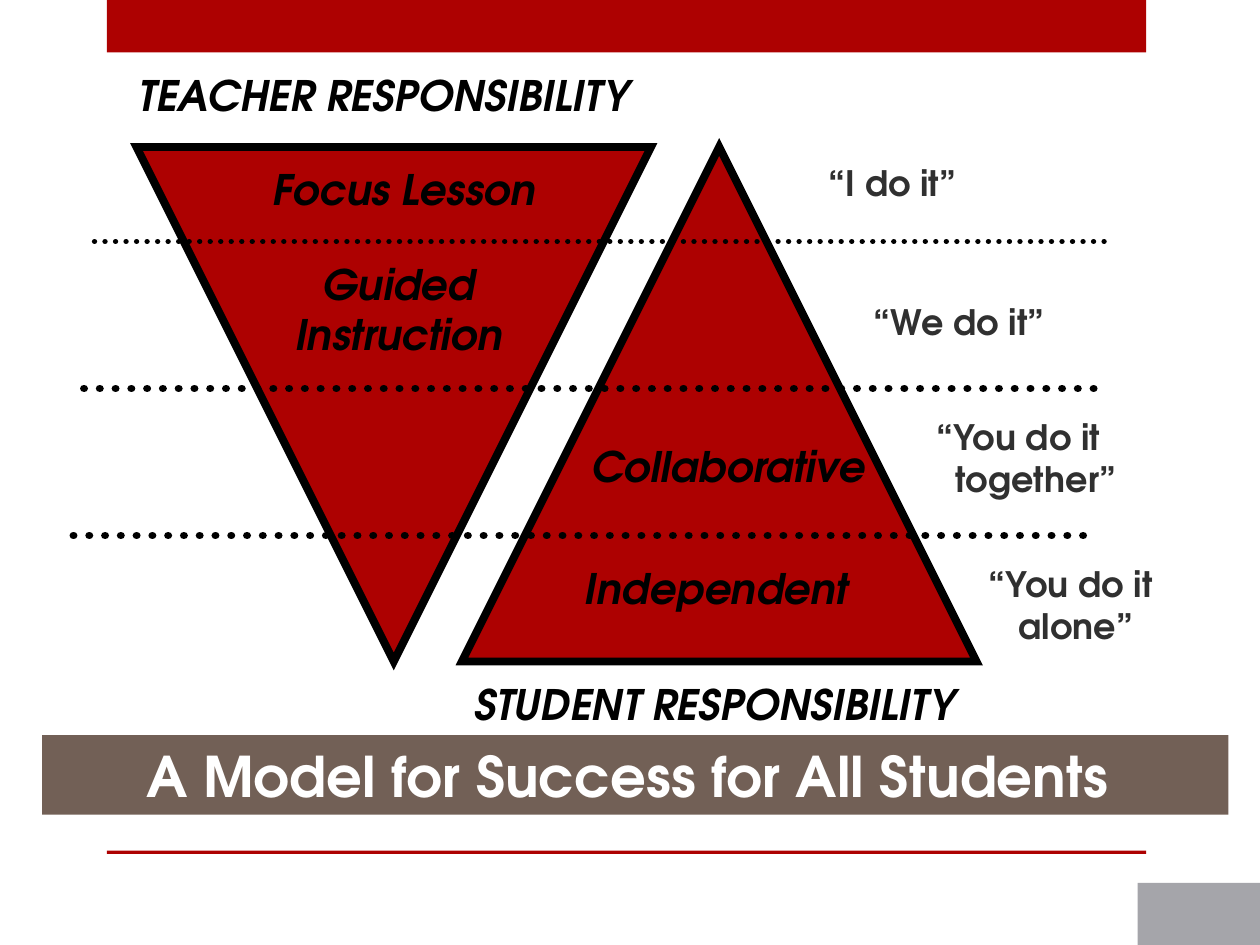
from dataclasses import dataclass

from lxml import etree
from pptx import Presentation
from pptx.dml.color import RGBColor
from pptx.enum.dml import MSO_LINE
from pptx.enum.shapes import MSO_CONNECTOR, MSO_SHAPE
from pptx.enum.text import MSO_ANCHOR, MSO_AUTO_SIZE, PP_ALIGN
from pptx.oxml.ns import qn
from pptx.util import Pt

RECTANGLE, TRIANGLE = MSO_SHAPE.RECTANGLE, MSO_SHAPE.ISOSCELES_TRIANGLE
STRAIGHT, DOTTED = MSO_CONNECTOR.STRAIGHT, MSO_LINE.ROUND_DOT
LEFT, CENTER = PP_ALIGN.LEFT, PP_ALIGN.CENTER
MIDDLE, NO_AUTOFIT = MSO_ANCHOR.MIDDLE, MSO_AUTO_SIZE.NONE


@dataclass(frozen=True)
class Theme:
    font: str = "TeX Gyre Adventor"
    red: RGBColor = RGBColor.from_string("AD0101")
    brown: RGBColor = RGBColor.from_string("726056")
    gray: RGBColor = RGBColor.from_string("A5A5AA")
    black: RGBColor = RGBColor.from_string("000000")
    dark: RGBColor = RGBColor.from_string("303030")
    white: RGBColor = RGBColor.from_string("FFFFFF")
    title: int = 32
    label: int = 24
    quote: int = 20


theme = Theme()
deck = Presentation()
deck.slide_width, deck.slide_height = Pt(720), Pt(540)
slide = deck.slides.add_slide(deck.slide_layouts[5])
shapes = slide.shapes


def add_filled(kind, left, top, width, height, color):
    shape = shapes.add_shape(kind, Pt(left), Pt(top), Pt(width), Pt(height))
    shape.shadow.inherit = False
    shape.fill.solid()
    shape.fill.fore_color.rgb = color
    shape.line.fill.background()
    return shape


def write(shape, text, size, color, align=LEFT, italic=False, wrap=True):
    frame = shape.text_frame
    frame.text = text
    frame.word_wrap = wrap
    frame.auto_size = NO_AUTOFIT
    for paragraph in frame.paragraphs:
        paragraph.alignment = align
        for run in paragraph.runs:
            run.font.name = theme.font
            run.font.size = Pt(size)
            run.font.bold = True
            run.font.italic = italic
            run.font.color.rgb = color


for top, height in [(0, 30), (486, 2)]:
    add_filled(RECTANGLE, 61, top, 594, height, theme.red)

for left, rotation in [(264, 0), (78, 180)]:
    responsibility = add_filled(TRIANGLE, left, 84, 294, 294, theme.red)
    responsibility.rotation = rotation
    responsibility.line.color.rgb = theme.black
    responsibility.line.width = Pt(4.5)
    outline = responsibility.line._get_or_add_ln()
    etree.SubElement(outline, qn("a:miter")).set("lim", "800000")

for index, weight in enumerate([3, 4.5, 4.5]):
    left, level = 54 - 6 * index, 138 + 84 * index
    divider = shapes.add_connector(STRAIGHT, Pt(left), Pt(level), Pt(left + 582), Pt(level))
    divider.line.color.rgb = theme.black
    divider.line.width = Pt(weight)
    divider.line.dash_style = DOTTED
    divider.line._get_or_add_ln().set("cap", "rnd")
    etree.SubElement(divider._element.spPr, qn("a:effectLst"))

stages = [
    ("TEACHER RESPONSIBILITY", 72, 36, 298, 36, LEFT, False),
    ("STUDENT RESPONSIBILITY", 264, 384, 342, 36, LEFT, True),
    ("Focus Lesson", 132, 90, 198, 36, CENTER, True),
    ("Guided Instruction", 144, 144, 168, 65.5, CENTER, True),
    ("Collaborative", 329, 248, 174, 36, CENTER, False),
    ("Independent", 326, 318, 167, 36, CENTER, False),
]
for text, left, top, width, height, align, wrap in stages:
    stage = shapes.add_textbox(Pt(left), Pt(top), Pt(width), Pt(height))
    write(stage, text, theme.label, theme.black, align, italic=True, wrap=wrap)

quotes = [
    ("“I do it”", 466.5, 88.5, 88, 31.5, 0),
    ("“We do it”", 492, 168, 125, 31.5, 0),
    ("“You do it\ntogether”", 528, 234, 118, 55.5, 11),
    ("“You do it\nalone”", 558, 318, 110, 55.5, 17),
]
for text, left, top, width, height, indent in quotes:
    quote = shapes.add_textbox(Pt(left), Pt(top), Pt(width), Pt(height))
    write(quote, text, theme.quote, theme.dark, wrap=False)
    for paragraph in quote.text_frame.paragraphs[1:]:
        paragraph._p.get_or_add_pPr().set("marL", str(Pt(indent)))

banner = shapes.title
banner.left, banner.top, banner.width, banner.height = Pt(24), Pt(420), Pt(678), Pt(45.5)
banner.fill.solid()
banner.fill.fore_color.rgb = theme.brown
write(banner, "A Model for Success for All Students", theme.title, theme.white, CENTER)
banner.text_frame.vertical_anchor = MIDDLE
banner.text_frame.margin_right = Pt(16)

add_filled(RECTANGLE, 650, 504.5, 70, 35.5, theme.gray)

deck.save("out.pptx")
